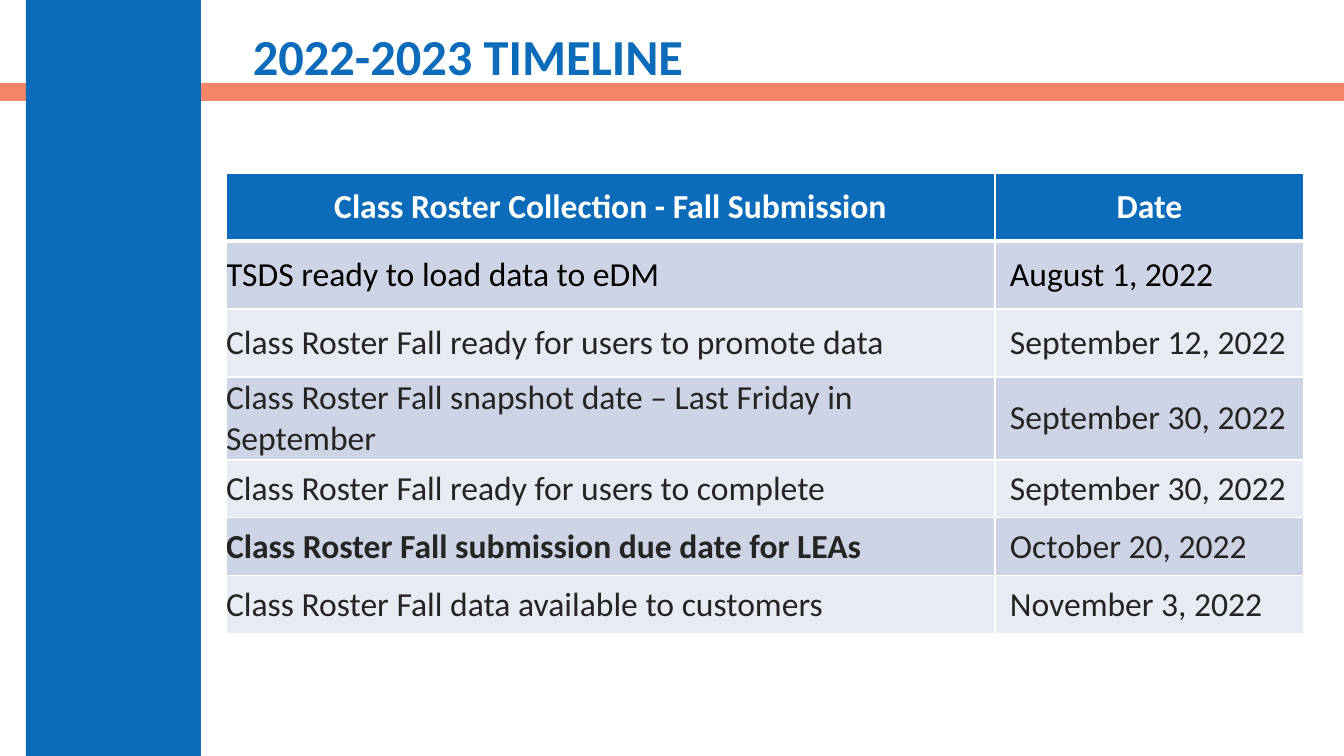
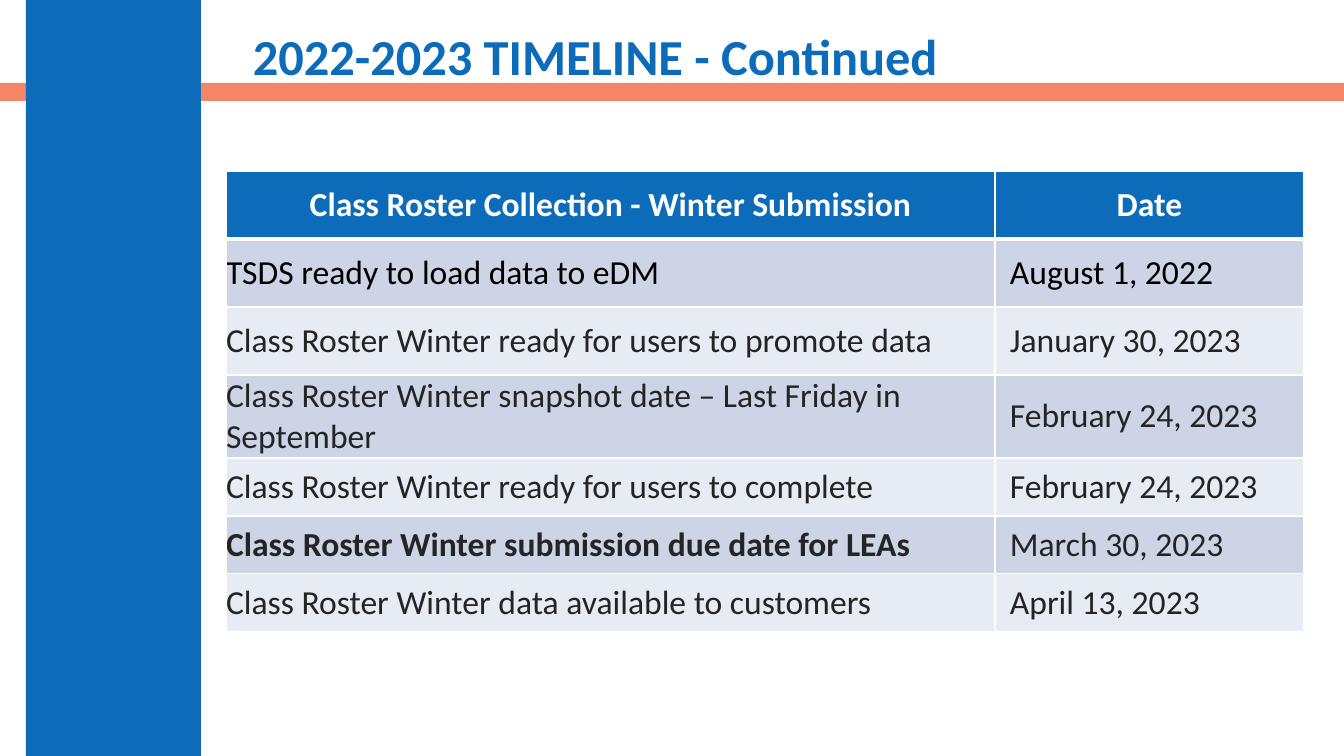
import lxml.etree
import pptx
import pptx.dml.color
import pptx.enum.shapes
import pptx.enum.text
import pptx.oxml.ns
import pptx.util

PX_PER_INCH = 100.8
SLIDE_WIDTH, SLIDE_HEIGHT = 1344, 756
FONT = "Calibri"
BLUE, CORAL, WHITE, BLACK, DARK = "0D6CB9", "F16038", "FFFFFF", "000000", "242424"
ROW_FILLS = ["CCD4E6", "E7EBF3"]

COLUMN_WIDTHS = [769, 309]
ROW_HEIGHTS = [68, 68, 68, 83, 58, 58, 58]
DATE_INDENT = 15
DUE_ROW = 5
EVENTS = [
    "TSDS ready to load data to eDM",
    "Class Roster {season} ready for users to promote data",
    "Class Roster {season} snapshot date – Last Friday in September",
    "Class Roster {season} ready for users to complete",
    "Class Roster {season} submission due date for LEAs",
    "Class Roster {season} data available to customers",
]
TIMELINES = [
    ("2022-2023 TIMELINE", "Fall", 173,
     ["August 1, 2022", "September 12, 2022", "September 30, 2022",
      "September 30, 2022", "October 20, 2022", "November 3, 2022"]),
    ("2022-2023 TIMELINE - Continued", "Winter", 171,
     ["August 1, 2022", "January 30, 2023", "February 24, 2023",
      "February 24, 2023", "March 30, 2023", "April 13, 2023"]),
]


def px(length):
    return pptx.util.Emu(round(length * 914400 / PX_PER_INCH))


def rgb(value):
    return pptx.dml.color.RGBColor.from_string(value)


def style_font(paragraph, size, color, bold):
    font = paragraph.font
    font.name = FONT
    font.size = pptx.util.Pt(size)
    font.bold = bold
    font.color.rgb = rgb(color)


def add_band(slide, left, top, width, height, color, opacity=100):
    shape = slide.shapes.add_shape(
        pptx.enum.shapes.MSO_SHAPE.RECTANGLE, px(left), px(top), px(width), px(height))
    shape.shadow.inherit = False
    shape.line.fill.background()
    shape.fill.solid()
    shape.fill.fore_color.rgb = rgb(color)
    if opacity < 100:
        fill_color = shape.fill._xPr.find(".//" + pptx.oxml.ns.qn("a:srgbClr"))
        lxml.etree.SubElement(
            fill_color, pptx.oxml.ns.qn("a:alpha"), val=str(opacity * 1000))


def add_title(slide, text, left, top, width, height):
    box = slide.shapes.add_textbox(px(left), px(top), px(width), px(height))
    frame = box.text_frame
    frame.word_wrap = True
    frame.vertical_anchor = pptx.enum.text.MSO_ANCHOR.MIDDLE
    paragraph = frame.paragraphs[0]
    paragraph.text = text
    paragraph.line_spacing = 0.9
    style_font(paragraph, 36, BLUE, True)


def add_cell_borders(cell, top, bottom):
    """Draw white borders; top and bottom are widths in points."""
    properties = cell._tc.get_or_add_tcPr()
    for side, width in (("L", 1), ("R", 1), ("T", top), ("B", bottom)):
        line = lxml.etree.SubElement(
            properties, pptx.oxml.ns.qn("a:ln" + side), w=str(pptx.util.Pt(width)))
        fill = lxml.etree.SubElement(line, pptx.oxml.ns.qn("a:solidFill"))
        lxml.etree.SubElement(fill, pptx.oxml.ns.qn("a:srgbClr"), val=WHITE)


def fill_cell(cell, text, row, column):
    header = row == 0
    add_cell_borders(cell, top=3 if row == 1 else 1, bottom=3 if header else 1)
    cell.fill.solid()
    cell.fill.fore_color.rgb = rgb(BLUE if header else ROW_FILLS[(row - 1) % 2])
    cell.margin_top = cell.margin_right = cell.margin_bottom = 0
    cell.margin_left = px(DATE_INDENT) if column == 1 and not header else 0
    cell.vertical_anchor = pptx.enum.text.MSO_ANCHOR.MIDDLE
    paragraph = cell.text_frame.paragraphs[0]
    paragraph.text = text
    if header:
        paragraph.alignment = pptx.enum.text.PP_ALIGN.CENTER
    color = {0: WHITE, 1: BLACK}.get(row, DARK)
    style_font(paragraph, 24, color, header or (row == DUE_ROW and column == 0))


def add_timeline_table(slide, left, top, season, dates):
    events = [event.format(season=season) for event in EVENTS]
    rows = [(f"Class Roster Collection - {season} Submission", "Date"), *zip(events, dates)]
    table = slide.shapes.add_table(
        len(rows), len(COLUMN_WIDTHS), px(left), px(top),
        px(sum(COLUMN_WIDTHS)), px(sum(ROW_HEIGHTS))).table
    for column, width in zip(table.columns, COLUMN_WIDTHS):
        column.width = px(width)
    for table_row, height in zip(table.rows, ROW_HEIGHTS):
        table_row.height = px(height)
    for row, texts in enumerate(rows):
        for column, text in enumerate(texts):
            fill_cell(table.cell(row, column), text, row, column)


def add_timeline_slide(presentation, title, season, table_top, dates):
    slide = presentation.slides.add_slide(presentation.slide_layouts[6])
    add_band(slide, 0, 83, SLIDE_WIDTH, 18, CORAL, opacity=76)
    add_band(slide, 26, 0, 175, SLIDE_HEIGHT, BLUE)
    add_title(slide, title, 243, 18, 1061, 83)
    add_timeline_table(slide, 226, table_top, season, dates)


def main():
    presentation = pptx.Presentation()
    presentation.slide_width = px(SLIDE_WIDTH)
    presentation.slide_height = px(SLIDE_HEIGHT)
    for timeline in TIMELINES:
        add_timeline_slide(presentation, *timeline)
    presentation.save("out.pptx")


if __name__ == "__main__":
    main()
